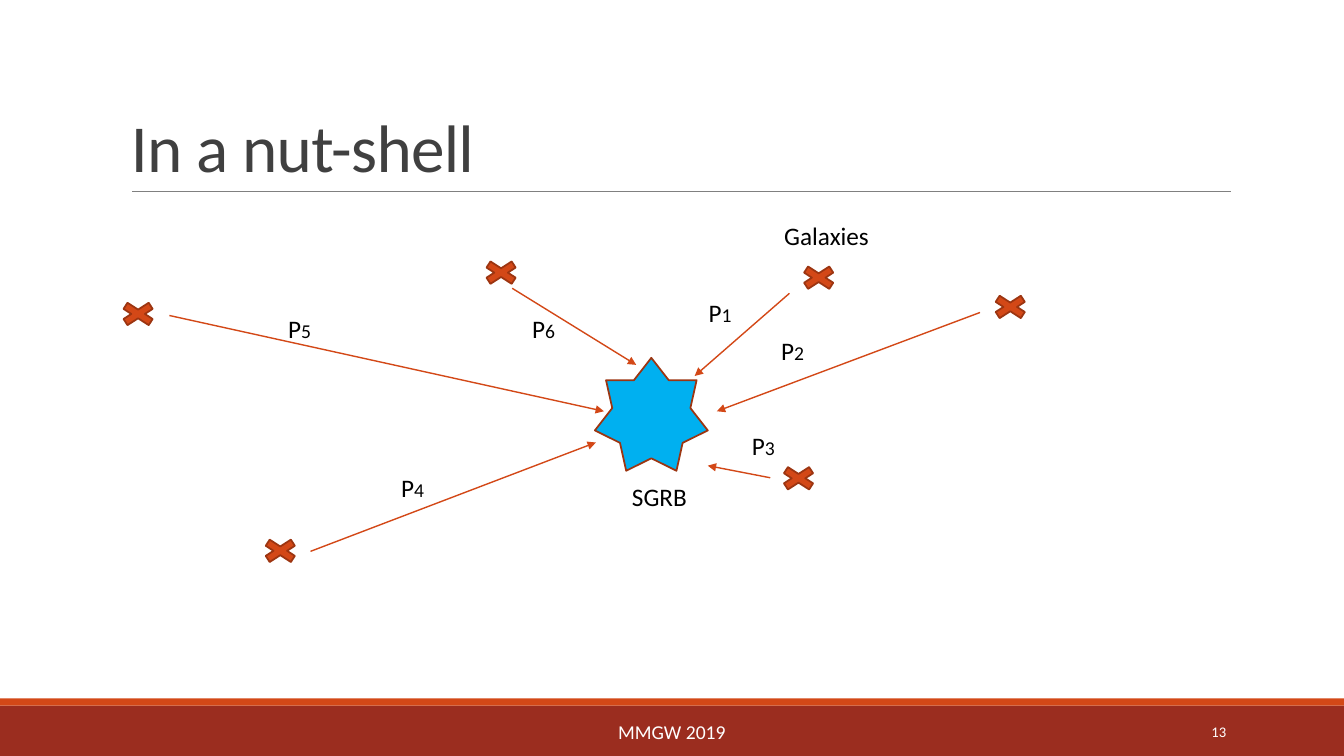
from dataclasses import dataclass

from lxml.etree import SubElement
from pptx import Presentation
from pptx.dml.color import RGBColor
from pptx.enum.shapes import MSO_CONNECTOR, MSO_SHAPE
from pptx.enum.text import MSO_ANCHOR, PP_ALIGN
from pptx.oxml.ns import qn
from pptx.util import Pt

EMU_PER_PX = 9144
PAGE_WIDTH, PAGE_HEIGHT = 1333, 750


@dataclass(frozen=True)
class Theme:
    font: str = "Calibri"
    orange: str = "D34817"
    outline: str = "9C3511"
    footer: str = "9B2D1F"
    burst: str = "00B0F0"
    rule: str = "808080"
    heading: str = "404040"
    ink: str = "000000"
    white: str = "FFFFFF"
    title_size: float = 48
    label_size: float = 18
    small_size: float = 14
    number_size: float = 10.5


@dataclass(frozen=True)
class Box:
    left: int
    top: int
    width: int
    height: int

    def inside(self, x, y, width, height):
        return Box(self.left + x, self.top + y, width, height)

    def point(self, position):
        return self.left + position[0], self.top + position[1]

    def lengths(self):
        return [px(value) for value in (self.left, self.top, self.width, self.height)]


@dataclass(frozen=True)
class Galaxy:
    number: str
    cross: tuple
    arrow_start: tuple
    arrow_end: tuple
    label: tuple


THEME = Theme()
GALAXIES = [
    Galaxy("1", (688, 60), (683, 91), (589, 173), (593, 90)),
    Galaxy("2", (878, 89), (872, 110), (611, 208), (665, 128)),
    Galaxy("3", (668, 259), (664, 274), (602, 262), (636, 222)),
    Galaxy("4", (154, 331), (208, 347), (491, 239), (288, 264)),
    Galaxy("5", (13, 96), (68, 113), (499, 208), (176, 106)),
    Galaxy("6", (373, 55), (408, 86), (531, 162), (418, 106)),
]


def px(value):
    return value * EMU_PER_PX


def color(value):
    return RGBColor.from_string(value)


def add_text(page, box, runs, ink, align=PP_ALIGN.LEFT, anchor=MSO_ANCHOR.TOP):
    frame = page.shapes.add_textbox(*box.lengths()).text_frame
    frame.word_wrap = True
    frame.vertical_anchor = anchor
    para = frame.paragraphs[0]
    para.alignment = align
    for text, size in runs:
        span = para.add_run()
        span.text = text
        span.font.name = THEME.font
        span.font.size = Pt(size)
        span.font.color.rgb = color(ink)
    return para


def add_figure(page, preset, box, fill, outline=None):
    shape = page.shapes.add_shape(preset, *box.lengths())
    shape.shadow.inherit = False
    shape.fill.solid()
    shape.fill.fore_color.rgb = color(fill)
    if outline:
        shape.line.color.rgb = color(outline)
        shape.line.width = Pt(1.25)
    else:
        shape.line.fill.background()


def add_line(page, start, end, ink, width, arrow=False):
    ends = [px(value) for value in (*start, *end)]
    line = page.shapes.add_connector(MSO_CONNECTOR.STRAIGHT, *ends)
    line.line.color.rgb = color(ink)
    line.line.width = Pt(width)
    properties = line._element.spPr
    if arrow:
        SubElement(properties.find(qn("a:ln")), qn("a:tailEnd"), type="triangle")
    SubElement(properties, qn("a:effectLst"))


def draw_title(page, box):
    runs = [("In a nut-shell", THEME.title_size)]
    para = add_text(page, box, runs, THEME.heading, anchor=MSO_ANCHOR.BOTTOM)
    para.line_spacing = 0.85
    para.runs[0].font._element.set("spc", "-50")
    start = box.point((11, box.height))
    end = box.point((box.width + 1, box.height))
    add_line(page, start, end, THEME.rule, 0.5)


def draw_footer(page, box):
    stripe = 7
    bar = box.inside(0, stripe, box.width, box.height - stripe)
    add_figure(page, MSO_SHAPE.RECTANGLE, bar, THEME.footer)
    add_figure(page, MSO_SHAPE.RECTANGLE, box.inside(0, 0, box.width, stripe), THEME.orange)
    add_text(page, box.inside(403, 13, 527, 40), [("MMGW 2019", THEME.small_size)],
             THEME.white, PP_ALIGN.CENTER, MSO_ANCHOR.MIDDLE)
    add_text(page, box.inside(1083, 13, 143, 40), [("13", THEME.number_size)],
             THEME.white, PP_ALIGN.RIGHT, MSO_ANCHOR.MIDDLE)


def draw_diagram(page, box):
    label_size = 147, 40
    add_figure(page, MSO_SHAPE.STAR_7_POINT, box.inside(490, 155, 112, 112),
               THEME.burst, THEME.outline)
    for galaxy in GALAXIES:
        add_figure(page, MSO_SHAPE.MATH_MULTIPLY, box.inside(*galaxy.cross, 48, 31),
                   THEME.orange, THEME.outline)
        add_line(page, box.point(galaxy.arrow_start), box.point(galaxy.arrow_end),
                 THEME.orange, 1, arrow=True)
        runs = [("P", THEME.label_size), (galaxy.number, THEME.small_size)]
        add_text(page, box.inside(*galaxy.label, *label_size), runs, THEME.ink)
    for name, position in (("Galaxies", (668, 14)), ("SGRB", (517, 273))):
        add_text(page, box.inside(*position, *label_size),
                 [(name, THEME.label_size)], THEME.ink)


def main():
    deck = Presentation()
    deck.slide_width = px(PAGE_WIDTH)
    deck.slide_height = px(PAGE_HEIGHT)
    page = deck.slides.add_slide(deck.slide_layouts[6])
    draw_footer(page, Box(0, 693, PAGE_WIDTH, 57))
    draw_title(page, Box(120, 31, 1100, 159))
    draw_diagram(page, Box(100, 200, 1000, 400))
    deck.save("out.pptx")


if __name__ == "__main__":
    main()
